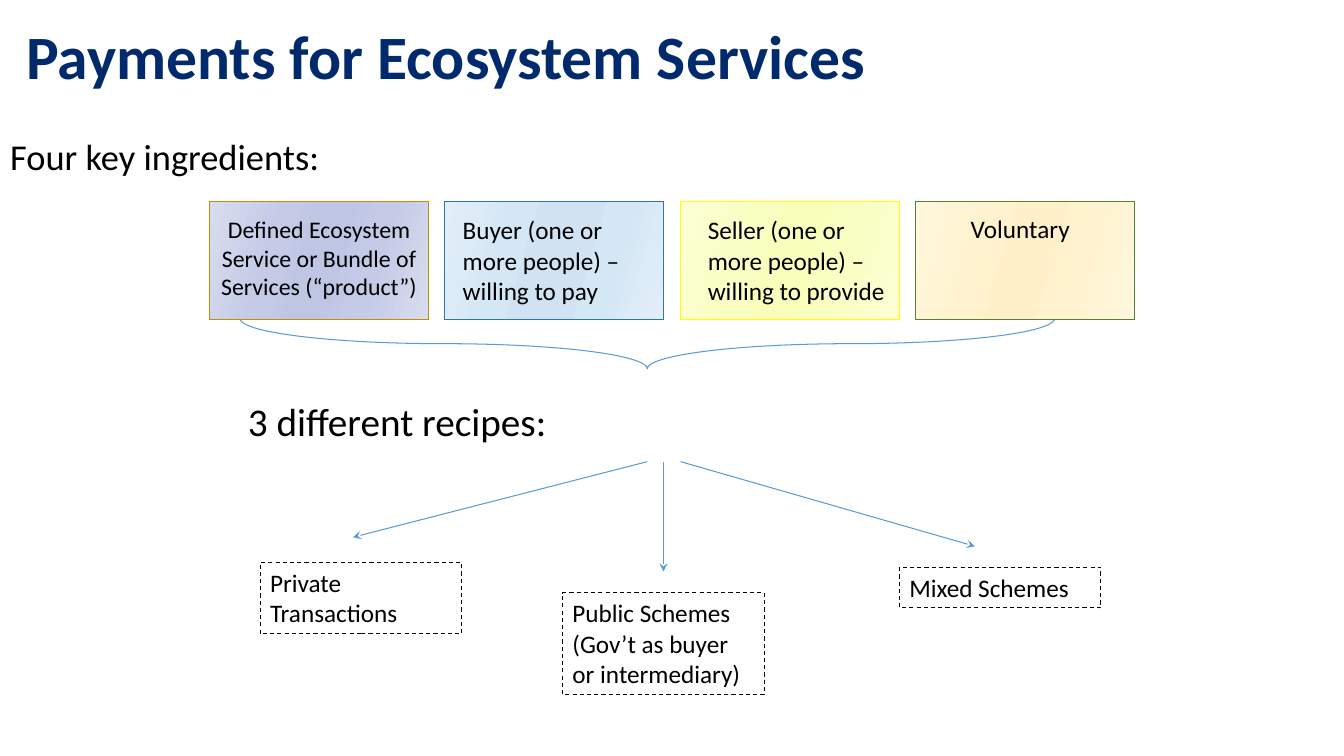
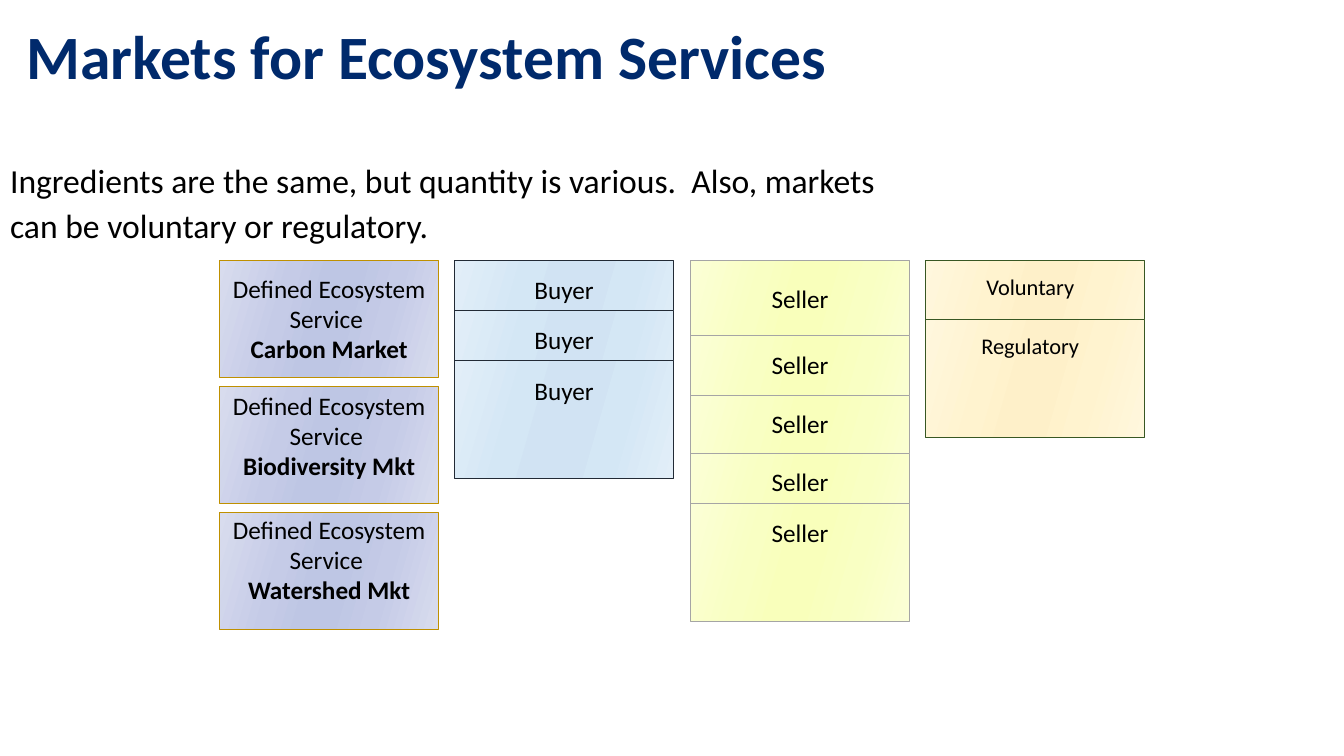
import pptx
import pptx.dml.color
import pptx.enum.dml
import pptx.enum.shapes
import pptx.enum.text
import pptx.oxml.ns
import pptx.util
from lxml import etree

RGB = pptx.dml.color.RGBColor
ALIGN = pptx.enum.text.PP_ALIGN
ANCHOR = pptx.enum.text.MSO_ANCHOR
SHAPE = pptx.enum.shapes.MSO_SHAPE
qn = pptx.oxml.ns.qn

SCALE = 9144
FONT = "Calibri"
NAVY = RGB(0x00, 0x2A, 0x6C)
BLACK = RGB(0x00, 0x00, 0x00)
BLUE = RGB(0x5B, 0x9B, 0xD5)
GOLD = RGB(0xBF, 0x90, 0x00)
STEEL = RGB(0x2E, 0x75, 0xB6)
SLATE = RGB(0x22, 0x2A, 0x35)
YELLOW = RGB(0xFF, 0xFF, 0x00)
GRAY = RGB(0xA5, 0xA5, 0xA5)
GREEN = RGB(0x54, 0x82, 0x35)
FOREST = RGB(0x38, 0x57, 0x23)
LILAC = (RGB(0xD8, 0xDC, 0xEE), RGB(0xC5, 0xCB, 0xE7), RGB(0xBE, 0xC6, 0xE4))
SKY = (RGB(0xE2, 0xEE, 0xF8), RGB(0xD4, 0xE7, 0xF5), RGB(0xD1, 0xE3, 0xF3))
LEMON = (RGB(0xFB, 0xFF, 0xD6), RGB(0xF9, 0xFF, 0xC3), RGB(0xF9, 0xFF, 0xBB))
CREAM = (RGB(0xFF, 0xF7, 0xDD), RGB(0xFF, 0xF3, 0xCF), RGB(0xFE, 0xF0, 0xC9))
STOPS = ((0, 0), (30, 1), (45, 2), (55, 2), (73, 1), (100, 0))
WIDE, HIGH = 217, 117


def px(count):
    return pptx.util.Emu(count * SCALE)


def col(left, index):
    return left + round(700 * index / 3)


class Deck:
    """Holds the shared style and the current slide."""

    def __init__(self):
        self.show = pptx.Presentation()
        self.show.slide_width = px(1333)
        self.show.slide_height = px(750)
        self.slide = None

    def page(self, title):
        self.slide = self.show.slides.add_slide(self.show.slide_layouts[1])
        head = self.slide.shapes.title
        self.place(head, 16, 0, 1299, 118)
        head.text_frame.vertical_anchor = ANCHOR.MIDDLE
        self.words(head.text_frame, [title], 44, color=NAVY, bold=True, space=0.9)

    def place(self, shape, left, top, width, height):
        shape.left, shape.top = px(left), px(top)
        shape.width, shape.height = px(width), px(height)

    def words(self, frame, lines, size, align=ALIGN.LEFT, color=BLACK,
              bold=False, space=1.0):
        frame.word_wrap = True
        frame.auto_size = pptx.enum.text.MSO_AUTO_SIZE.NONE
        for index, line in enumerate(lines):
            para = frame.add_paragraph() if index else frame.paragraphs[0]
            para.alignment = align
            para.line_spacing = space
            para.space_before = pptx.util.Pt(0)
            run = para.add_run()
            run.text = line
            run.font.name = FONT
            run.font.size = pptx.util.Pt(size)
            run.font.bold = bold or index > 0
            run.font.color.rgb = color

    def body(self, text, top, size, space):
        box = self.slide.placeholders[1]
        self.place(box, 0, top, 900, 540)
        props = box.text_frame.paragraphs[0]._p.get_or_add_pPr()
        props.set("marL", "0")
        props.set("indent", "0")
        etree.SubElement(props, qn("a:buNone"))
        self.words(box.text_frame, [text], size, space=space)

    def label(self, text, left, top, width, height, size):
        box = self.slide.shapes.add_textbox(px(left), px(top), px(width), px(height))
        self.words(box.text_frame, [text], size)
        box.text_frame.word_wrap = False

    def shape(self, kind, left, top, width, height, color):
        shape = self.slide.shapes.add_shape(
            kind, px(left), px(top), px(width), px(height))
        shape.shadow.inherit = False
        shape.fill.background()
        shape.line.color.rgb = color
        shape.line.width = pptx.util.Pt(0.75)
        shape.text_frame.vertical_anchor = ANCHOR.TOP
        return shape

    def card(self, lines, left, top, tint, edge, size=18, align=ALIGN.CENTER,
             inset=(10, 13, 10)):
        card = self.shape(SHAPE.RECTANGLE, left, top, WIDE, HIGH, edge)
        card.fill.gradient()
        card.fill.gradient_angle = 344
        stops = card._element.spPr.find(".//" + qn("a:gsLst"))
        for stop in list(stops):
            stops.remove(stop)
        for spot, shade in STOPS:
            stop = etree.SubElement(stops, qn("a:gs"), pos=str(spot * 1000))
            etree.SubElement(stop, qn("a:srgbClr"), val=str(tint[shade]))
        frame = card.text_frame
        frame.margin_left, frame.margin_top, frame.margin_right = map(px, inset)
        self.words(frame, lines, size, align)

    def dashed(self, text, left, top, height):
        box = self.shape(SHAPE.RECTANGLE, left, top, 200, height, BLACK)
        box.line.dash_style = pptx.enum.dml.MSO_LINE.DASH
        self.words(box.text_frame, [text], 18)

    def brace(self, left, top, width, height):
        brace = self.shape(SHAPE.RIGHT_BRACE, left, top, width, height, BLUE)
        brace.rotation = 90
        brace.adjustments[0] = 4.04
        brace.adjustments[1] = 0.5

    def arrow(self, start, end):
        line = self.slide.shapes.add_connector(
            pptx.enum.shapes.MSO_CONNECTOR.STRAIGHT, *map(px, start + end))
        line.line.color.rgb = BLUE
        line.line.width = pptx.util.Pt(0.75)
        etree.SubElement(line.line._get_or_add_ln(), qn("a:tailEnd"), type="stealth")
        etree.SubElement(line._element.spPr, qn("a:effectLst"))


def main():
    deck = Deck()

    deck.page("Payments for Ecosystem Services")
    deck.body("Four key ingredients:", 133, 26, 0.9)
    deck.brace(617, -63, 50, 808)
    for start, end in (((642, 458), (350, 533)), ((675, 458), (967, 542)),
                       ((658, 458), (658, 567))):
        deck.arrow(start, end)
    needs = (
        ("Defined Ecosystem Service or Bundle of Services (“product”)",
         LILAC, GOLD, 17, ALIGN.CENTER, (10, 13, 10)),
        ("Buyer (one or more people) – willing to pay",
         SKY, STEEL, 18, ALIGN.LEFT, (18, 13, 10)),
        ("Seller (one or more people) – willing to provide",
         LEMON, YELLOW, 18, ALIGN.LEFT, (27, 13, 2)),
        ("Voluntary", CREAM, GREEN, 18, ALIGN.CENTER, (10, 12, 19)),
    )
    for index, (text, *style) in enumerate(needs):
        deck.card([text], col(208, index), 200, *style)
    deck.dashed("Private Transactions", 258, 558, 71)
    deck.dashed("Public Schemes (Gov’t as buyer or intermediary)", 558, 588, 101)
    deck.dashed("Mixed Schemes", 892, 563, 40)
    deck.label("3 different recipes:", 236, 389, 322, 57, 28)

    deck.page("Markets for Ecosystem Services")
    deck.body("Ingredients are the same, but quantity is various.  Also, markets "
              "can be voluntary or regulatory.", 150, 24, 1.1)
    for index, (name, inset) in enumerate((
            ("Carbon Market", 13), ("Biodiversity Mkt", 4), ("Watershed Mkt", 2))):
        deck.card(["Defined Ecosystem Service ", name], col(218, 0),
                  258 + 125 * index, LILAC, GOLD, inset=(10, inset, 10))
    for top in (258, 308, 358):
        deck.card(["Buyer"], col(218, 1), top, SKY, SLATE, inset=(10, 14, 10))
    for top, inset in ((258, 23), (333, 14), (392, 13), (450, 13), (500, 13)):
        deck.card(["Seller"], col(218, 2), top, LEMON, GRAY, inset=(10, inset, 10))
    for top, text in ((258, "Voluntary"), (317, "Regulatory")):
        deck.card([text], col(218, 3), top, CREAM, FOREST, 16, inset=(10, 13, 19))

    deck.show.save("out.pptx")


if __name__ == "__main__":
    main()
